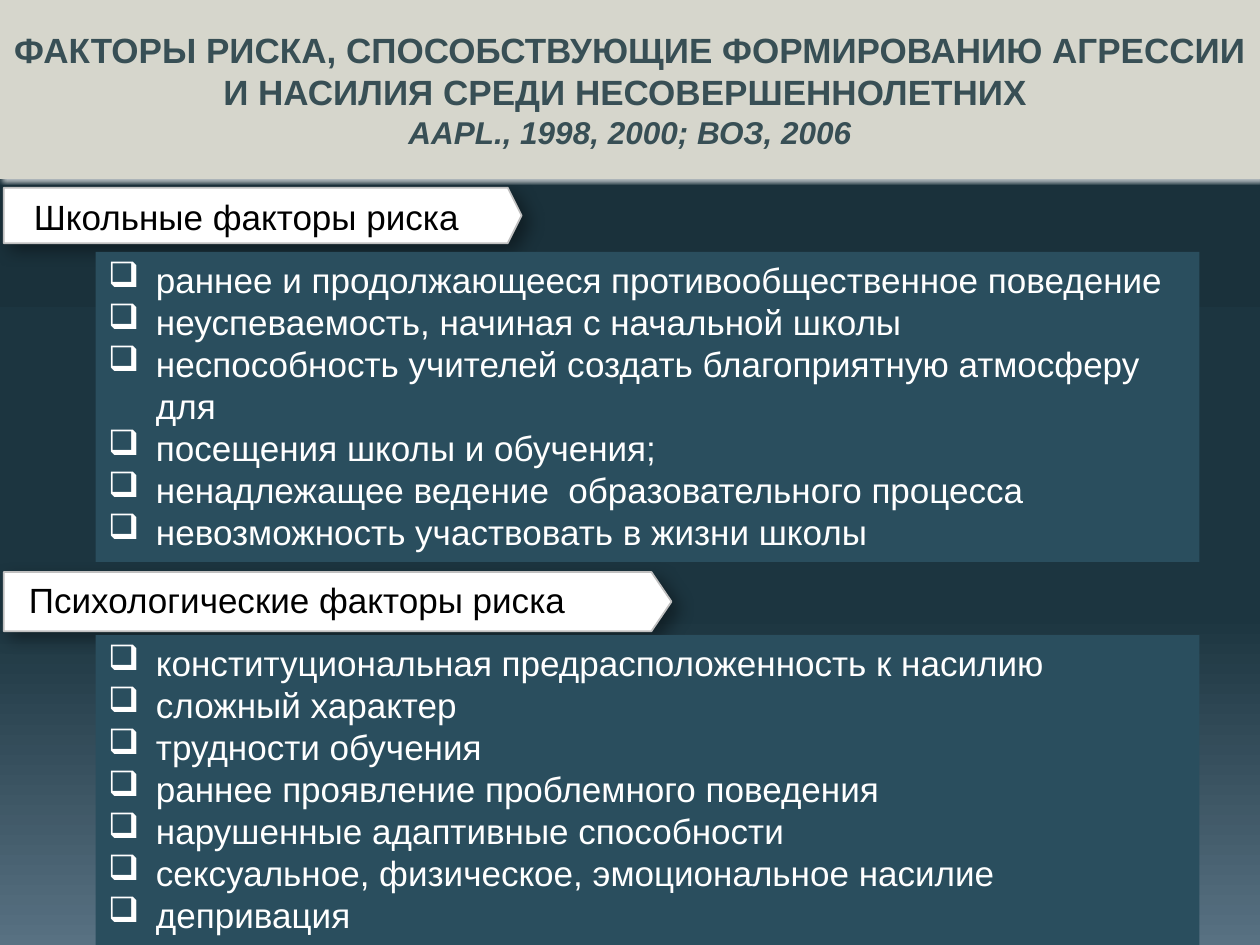
from dataclasses import dataclass
from typing import Optional

import pptx
import pptx.dml.color
import pptx.enum.shapes
import pptx.enum.text
import pptx.oxml
import pptx.oxml.ns
import pptx.util
from lxml import etree

RGBColor = pptx.dml.color.RGBColor
Pt = pptx.util.Pt
Inches = pptx.util.Inches
Shapes = pptx.enum.shapes.MSO_SHAPE
Anchor = pptx.enum.text.MSO_ANCHOR
Align = pptx.enum.text.PP_ALIGN

WHITE = RGBColor(0xFF, 0xFF, 0xFF)
BLACK = RGBColor(0x00, 0x00, 0x00)
SILVER = RGBColor(0xC0, 0xC0, 0xC0)
PANEL = RGBColor(0x2A, 0x4E, 0x5E)
HEADER = RGBColor(0xD6, 0xD6, 0xCC)
TITLE = RGBColor(0x38, 0x4F, 0x55)
BACKGROUND = (
    (0, RGBColor(0x1A, 0x31, 0x3B)),
    (65, RGBColor(0x1C, 0x35, 0x40)),
    (100, RGBColor(0x58, 0x71, 0x82)),
)

COLUMNS, ROWS = 100, 75
WIDTH, HEIGHT = Inches(10), Inches(7.5)
FONT = "Arial"
BULLET = "❑"
INDENT = Inches(0.38)


@dataclass(frozen=True)
class Frame:
    column: float
    row: float
    columns: float
    rows: float

    def box(self) -> tuple[int, int, int, int]:
        return (
            round(self.column * WIDTH / COLUMNS),
            round(self.row * HEIGHT / ROWS),
            round(self.columns * WIDTH / COLUMNS),
            round(self.rows * HEIGHT / ROWS),
        )


@dataclass(frozen=True)
class Shadow:
    color: RGBColor
    alpha: int
    blur: float
    distance: float
    angle: int


@dataclass(frozen=True)
class Section:
    heading: str
    arrow: Frame
    point: float
    label: Optional[Frame]
    panel: Frame
    factors: tuple[str, ...]


ARROW_SHADOW = Shadow(BLACK, 40, 10, 5, 45)
HEADER_SHADOW = Shadow(WHITE, 71, 2, 2, 40)

SECTIONS = (
    Section(
        "Школьные факторы риска",
        Frame(0.3, 14.9, 41.1, 4.4),
        0.25,
        Frame(1.7, 15, 37.2, 4.4),
        Frame(7.6, 20, 87.6, 24.6),
        (
            "раннее и продолжающееся противообщественное поведение",
            "неуспеваемость, начиная с начальной школы",
            "неспособность учителей создать благоприятную атмосферу для",
            "посещения школы и обучения;",
            "ненадлежащее ведение  образовательного процесса",
            "невозможность участвовать в жизни школы",
        ),
    ),
    Section(
        "Психологические факторы риска",
        Frame(0.3, 45.4, 53, 4.7),
        0.34,
        None,
        Frame(7.6, 50.4, 87.6, 24.6),
        (
            "конституциональная предрасположенность к насилию",
            "сложный характер",
            "трудности обучения",
            "раннее проявление проблемного поведения",
            "нарушенные адаптивные способности",
            "сексуальное, физическое, эмоциональное насилие",
            "депривация",
        ),
    ),
)


def add_run(paragraph, text: str, color: RGBColor, size: int = 20,
            bold: bool = False, italic: bool = False) -> None:
    run = paragraph.add_run()
    run.text = text
    font = run.font
    font.name, font.size = FONT, Pt(size)
    font.bold, font.italic = bold, italic
    font.color.rgb = color


def add_block(shapes, kind, frame: Frame, fill: RGBColor,
              line: Optional[RGBColor] = None):
    shape = shapes.add_shape(kind, *frame.box())
    shape.shadow.inherit = False
    shape.fill.solid()
    shape.fill.fore_color.rgb = fill
    if line is None:
        shape.line.fill.background()
    else:
        shape.line.color.rgb = line
        shape.line.width = Pt(1)
    shape.text_frame.word_wrap = True
    return shape


def cast_shadow(shape, shadow: Shadow) -> None:
    effects = shape._element.spPr.find(pptx.oxml.ns.qn("a:effectLst"))
    outer = etree.SubElement(
        effects, pptx.oxml.ns.qn("a:outerShdw"),
        blurRad=str(Pt(shadow.blur)), dist=str(Pt(shadow.distance)),
        dir=str(shadow.angle * 60000), algn="tl", rotWithShape="0")
    color = etree.SubElement(outer, pptx.oxml.ns.qn("a:srgbClr"), val=str(shadow.color))
    etree.SubElement(color, pptx.oxml.ns.qn("a:alpha"), val=str(shadow.alpha * 1000))


def paint_background(slide) -> None:
    fill = slide.background.fill
    fill.gradient()
    fill.gradient_angle = 270
    stops = slide._element.find(".//" + pptx.oxml.ns.qn("a:gsLst"))
    for stop in list(stops):
        stops.remove(stop)
    for position, color in BACKGROUND:
        stop = etree.SubElement(stops, pptx.oxml.ns.qn("a:gs"), pos=str(position * 1000))
        etree.SubElement(stop, pptx.oxml.ns.qn("a:srgbClr"), val=str(color))


def add_bullet(paragraph) -> None:
    properties = paragraph._p.get_or_add_pPr()
    properties.set("marL", str(INDENT))
    properties.set("indent", str(-INDENT))
    etree.SubElement(properties, pptx.oxml.ns.qn("a:buChar"), char=BULLET)


def add_section(slide, section: Section) -> None:
    shapes = slide.shapes.add_group_shape().shapes
    arrow = add_block(shapes, Shapes.PENTAGON, section.arrow, WHITE, SILVER)
    arrow.adjustments[0] = section.point
    cast_shadow(arrow, ARROW_SHADOW)
    if section.label is None:
        frame = arrow.text_frame
        frame.vertical_anchor = Anchor.MIDDLE
        frame.margin_left, frame.margin_right = Inches(0.2), Inches(0.16)
        frame.margin_top = frame.margin_bottom = 0
        frame.paragraphs[0].line_spacing = 0.95
        frame.paragraphs[0].space_after = Pt(8)
    else:
        frame = shapes.add_textbox(*section.label.box()).text_frame
        frame.word_wrap = True
    frame.paragraphs[0].alignment = Align.LEFT
    add_run(frame.paragraphs[0], section.heading, BLACK)

    panel = add_block(shapes, Shapes.RECTANGLE, section.panel, PANEL).text_frame
    panel.vertical_anchor = Anchor.TOP
    for index, factor in enumerate(section.factors):
        paragraph = panel.add_paragraph() if index else panel.paragraphs[0]
        paragraph.alignment = Align.LEFT
        add_bullet(paragraph)
        add_run(paragraph, factor, WHITE)


def add_header(slide) -> None:
    header = add_block(slide.shapes, Shapes.RECTANGLE, Frame(0, 0, COLUMNS, 14.2), HEADER)
    cast_shadow(header, HEADER_SHADOW)
    frame = header.text_frame
    frame.vertical_anchor = Anchor.MIDDLE
    title, source = frame.paragraphs[0], frame.add_paragraph()
    title.alignment = source.alignment = Align.CENTER
    add_run(title, "ФАКТОРЫ РИСКА, СПОСОБСТВУЮЩИЕ ФОРМИРОВАНИЮ АГРЕССИИ "
            "И НАСИЛИЯ СРЕДИ НЕСОВЕРШЕННОЛЕТНИХ ", TITLE, bold=True)
    add_run(source, "AAPL., 1998, 2000; ВОЗ, 2006", TITLE, 18, bold=True, italic=True)


def main() -> None:
    presentation = pptx.Presentation()
    presentation.slide_width, presentation.slide_height = WIDTH, HEIGHT
    slide = presentation.slides.add_slide(presentation.slide_layouts[6])
    paint_background(slide)
    for section in SECTIONS:
        add_section(slide, section)
    add_header(slide)
    presentation.save("out.pptx")


if __name__ == "__main__":
    main()
